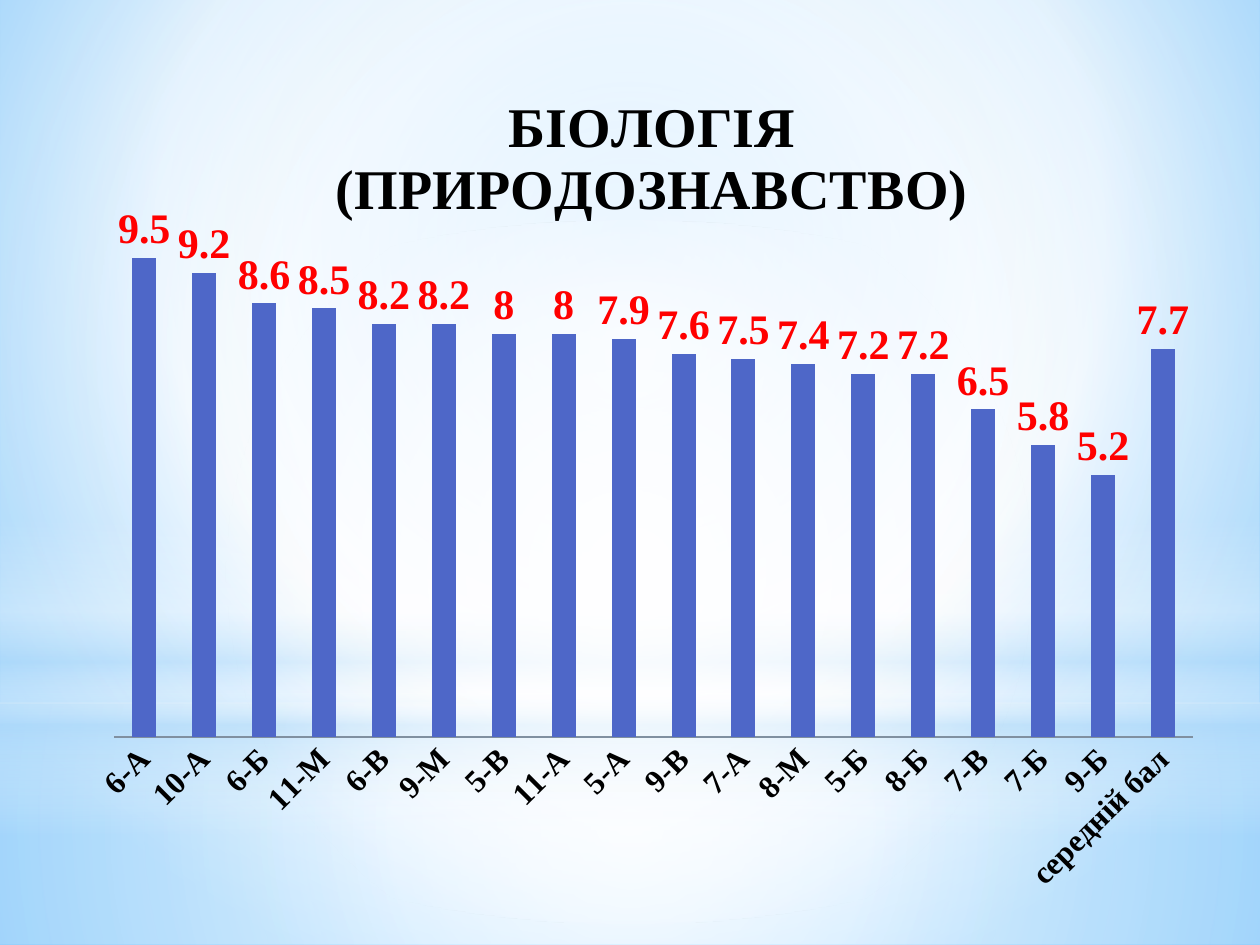
from dataclasses import dataclass
from typing import Optional

from lxml.etree import SubElement
from pptx import Presentation
from pptx.chart.data import CategoryChartData
from pptx.dml.color import RGBColor
from pptx.enum.chart import XL_CHART_TYPE, XL_LABEL_POSITION, XL_TICK_MARK
from pptx.enum.shapes import MSO_SHAPE
from pptx.oxml import parse_xml
from pptx.oxml.ns import nsdecls, qn
from pptx.util import Inches, Pt

W, H = Inches(10), Inches(7.5)
BLACK = RGBColor(0, 0, 0)
RED = RGBColor(0xFF, 0, 0)
BLUE = RGBColor(0x4E, 0x67, 0xC8)
GREY = RGBColor(0x80, 0x90, 0xA0)
WHITE = RGBColor(0xFF, 0xFF, 0xFF)
PALE = RGBColor(0xB4, 0xDC, 0xFA)
SKY = RGBColor(0x9E, 0xD5, 0xFF)
DEEP = RGBColor(0x5B, 0xB9, 0xFF)
SERIF = "Times New Roman"
CENTRE = (50, 50, 50, 50)

TITLE = "БІОЛОГІЯ (ПРИРОДОЗНАВСТВО)"
SCORES = {
    "6-А": 9.5, "10-А": 9.2, "6-Б": 8.6, "11-М": 8.5, "6-В": 8.2, "9-М": 8.2,
    "5-В": 8, "11-А": 8, "5-А": 7.9, "9-В": 7.6, "7-А": 7.5, "8-М": 7.4,
    "5-Б": 7.2, "8-Б": 7.2, "7-В": 6.5, "7-Б": 5.8, "9-Б": 5.2,
    "середній бал": 7.7,
}


@dataclass
class Stop:
    pos: int
    color: RGBColor
    alpha: int = 100


@dataclass
class Glow:
    shape: MSO_SHAPE
    top: float
    height: float
    stops: list[Stop]
    focus: Optional[tuple] = CENTRE


GLOWS = [
    Glow(MSO_SHAPE.RECTANGLE, 0.744, 0.256,
         [Stop(0, WHITE, 91), Stop(37, WHITE, 76), Stop(100, PALE, 79)]),
    Glow(MSO_SHAPE.RECTANGLE, 0, 0.744,
         [Stop(0, WHITE, 89), Stop(48, WHITE, 62), Stop(100, PALE, 79)]),
    Glow(MSO_SHAPE.RECTANGLE, 0.55, 0.333,
         [Stop(0, WHITE, 0), Stop(29, WHITE, 30), Stop(45, PALE, 40),
          Stop(55, WHITE, 26), Stop(65, PALE, 60), Stop(100, WHITE, 0)], None),
    Glow(MSO_SHAPE.OVAL, 0.233, 0.744, [Stop(0, WHITE), Stop(56, WHITE, 0)]),
]


def set_gradient(fill, parent, stops: list[Stop], focus: Optional[tuple]) -> None:
    fill.solid()
    gs = "".join(
        f'<a:gs pos="{s.pos * 1000}"><a:srgbClr val="{s.color}">'
        f'<a:alpha val="{s.alpha * 1000}"/></a:srgbClr></a:gs>' for s in stops)
    if focus:
        sides = " ".join(f'{k}="{v * 1000}"' for k, v in zip("ltrb", focus))
        way = f'<a:path path="circle"><a:fillToRect {sides}/></a:path>'
    else:
        way = '<a:lin ang="5400000" scaled="0"/>'
    grad = parse_xml(f'<a:gradFill {nsdecls("a")} rotWithShape="1">'
                     f'<a:gsLst>{gs}</a:gsLst>{way}</a:gradFill>')
    parent.replace(parent.find(qn("a:solidFill")), grad)


def add_glow(s, glow: Glow) -> None:
    sp = s.shapes.add_shape(glow.shape, 0, int(H * glow.top), W, int(H * glow.height))
    sp.shadow.inherit = False
    sp.line.fill.background()
    set_gradient(sp.fill, sp._element.spPr, glow.stops, glow.focus)


def set_font(font, **values) -> None:
    color = values.pop("color", BLACK)
    for name, value in values.items():
        setattr(font, name, value)
    font.color.rgb = color


def set_layout(element, **shares) -> None:
    layout = element.find(qn("c:layout"))
    if layout is None:
        layout = parse_xml(f'<c:layout {nsdecls("c")}/>')
        text = element.find(qn("c:tx"))
        element.insert(0 if text is None else 1, layout)
    manual = SubElement(layout, qn("c:manualLayout"))
    if "w" in shares:
        SubElement(manual, qn("c:layoutTarget")).set("val", "inner")
    for key in ("x", "y"):
        SubElement(manual, qn(f"c:{key}Mode")).set("val", "edge")
    for key, value in shares.items():
        SubElement(manual, qn(f"c:{key}")).set("val", str(value))


def add_score_chart(s) -> None:
    data = CategoryChartData()
    data.categories = list(SCORES)
    data.add_series("Series 1", list(SCORES.values()))
    chart = s.shapes.add_chart(
        XL_CHART_TYPE.COLUMN_CLUSTERED, Inches(0.59), Inches(0.44),
        Inches(9.06), Inches(6.77), data).chart
    set_font(chart.font, name="Karla", size=Pt(10))
    chart.has_legend = False

    chart.has_title = True
    title = chart.chart_title
    title.include_in_layout = False
    p = title.text_frame.paragraphs[0]
    r = p.add_run()
    r.text = TITLE
    set_font(r.font, name=SERIF, size=Pt(32), bold=True)
    set_layout(title._element, x=0.22, y=0.03)

    axis = chart.category_axis
    axis.major_tick_mark = axis.minor_tick_mark = XL_TICK_MARK.NONE
    axis.format.line.color.rgb = GREY
    axis.format.line.width = Pt(0.75)
    set_font(axis.tick_labels.font, name=SERIF, size=Pt(18), bold=True)
    axis._element.txPr.find(qn("a:bodyPr")).set("rot", "-2700000")

    values = chart.value_axis
    values.visible = False
    values.has_major_gridlines = False
    values.minimum_scale, values.maximum_scale = 0, 10

    plot = chart.plots[0]
    plot.vary_by_categories = False
    plot.gap_width = 150
    series = plot.series[0]
    series.format.fill.solid()
    series.format.fill.fore_color.rgb = BLUE
    labels = series.data_labels
    labels.show_value = True
    labels.position = XL_LABEL_POSITION.OUTSIDE_END
    set_font(labels.font, name=SERIF, size=Pt(24), bold=True, color=RED)
    set_layout(chart._chartSpace.chart.plotArea, x=0.035, y=0.208, w=0.945, h=0.591)


def main() -> None:
    prs = Presentation()
    prs.slide_width, prs.slide_height = W, H
    s = prs.slides.add_slide(prs.slide_layouts[6])
    fill = s.background.fill
    set_gradient(fill, s._element.cSld.bg.bgPr,
                 [Stop(0, SKY), Stop(60, WHITE), Stop(100, DEEP)], (20, 10, 20, 60))
    for glow in GLOWS:
        add_glow(s, glow)
    add_score_chart(s)
    prs.save("out.pptx")


if __name__ == "__main__":
    main()
